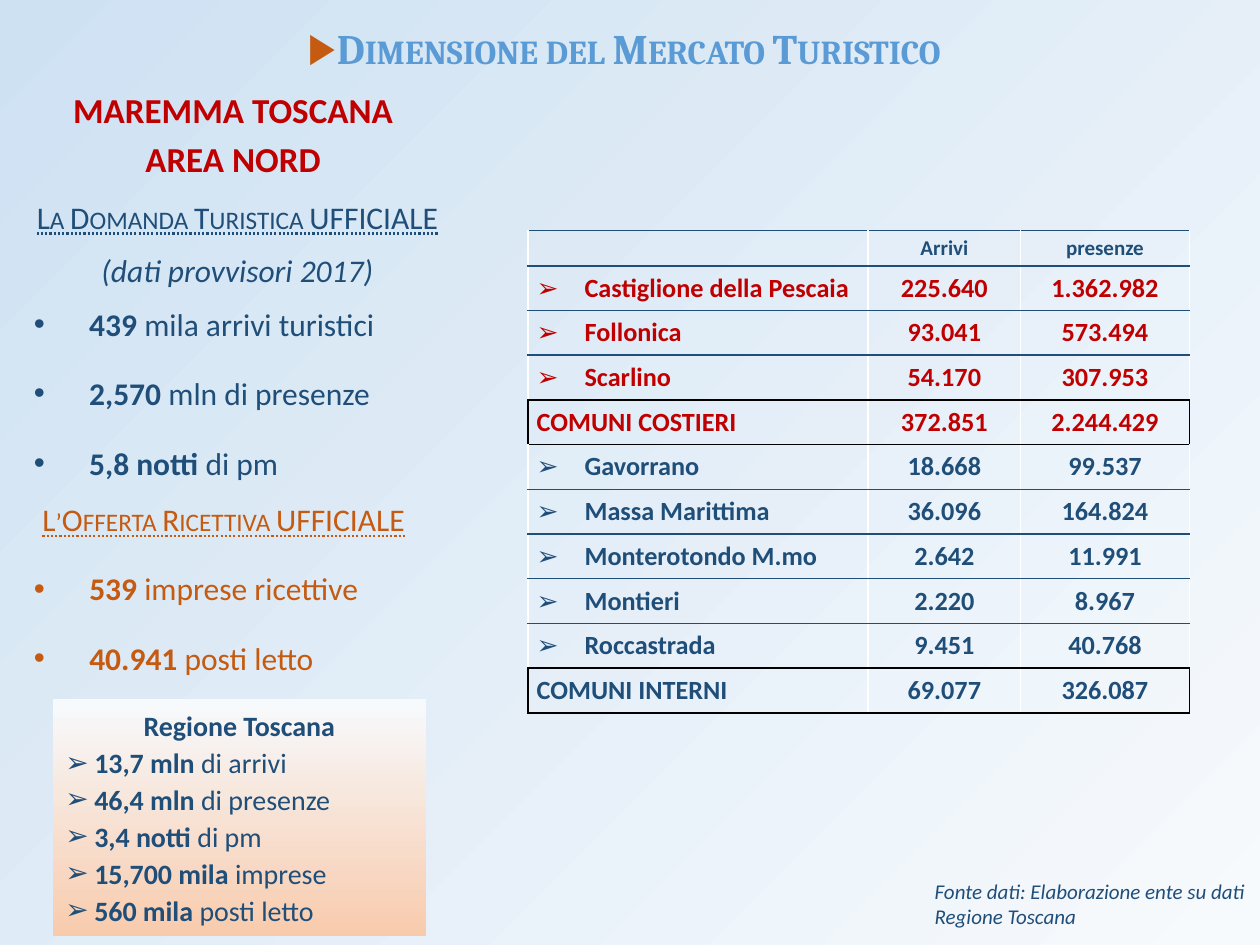
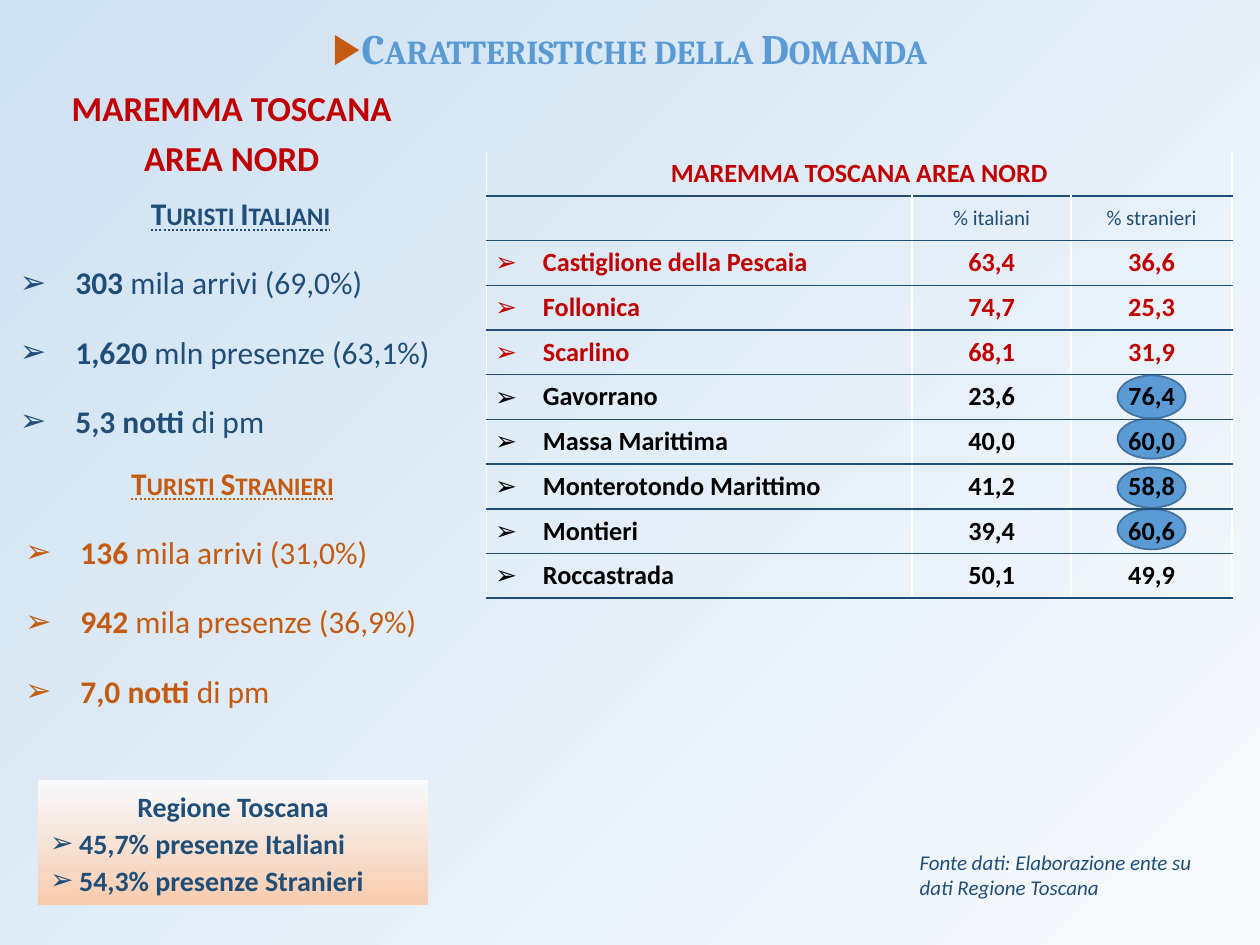
from lxml import etree
from pptx import Presentation
from pptx.dml.color import RGBColor
from pptx.enum import shapes, text
from pptx.oxml import ns
from pptx.util import Inches, Pt

COLORS = {
    "sky": "5B9BD5", "sky_edge": "43739E", "navy": "1F4E79", "orange": "C55A11",
    "red": "C00000", "black": "000000", "white": "FFFFFF",
    "pale": "F7FAFD", "light_blue": "CEE1F2", "peach": "F8CBAD",
}
CENTER = text.PP_ALIGN.CENTER
ARROW, DOT, TRIANGLE = "➢", "•", "▶"
ROW_HEIGHT = Inches(0.355)
SOURCE = "Fonte dati: Elaborazione ente su dati Regione Toscana"


def rgb(name):
    return RGBColor.from_string(COLORS[name])


def sub(parent, tag, **attributes):
    return etree.SubElement(parent, ns.qn(tag), **attributes)


def gradient(fill, start, end, angle):
    fill.gradient()
    fill.gradient_angle = angle
    for stop, color in zip(fill.gradient_stops, (start, end)):
        stop.color.rgb = rgb(color)


# Text
def style_run(run, size, color, bold=False, italic=False, font="Calibri",
              small_caps=False, underline=False):
    run.font.size, run.font.name = Pt(size), font
    run.font.bold, run.font.italic = bold, italic
    run.font.color.rgb = rgb(color)
    if small_caps:
        run._r.get_or_add_rPr().set("cap", "small")
    if underline:
        run.font.underline = text.MSO_UNDERLINE.DOTTED_LINE


def set_bullet(paragraph, char, indent, color=None):
    properties = paragraph._p.get_or_add_pPr()
    properties.set("marL", str(Inches(indent)))
    properties.set("indent", str(-Inches(indent)))
    if color:
        sub(sub(properties, "a:buClr"), "a:srgbClr", val=COLORS[color])
    sub(properties, "a:buFont", typeface="Arial")
    sub(properties, "a:buChar", char=char)


def add_line(frame, parts, size, color, align=None, before=0, after=0, spacing=None, **style):
    """Add a paragraph; parts is one string or a (bold, regular) pair."""
    paragraph = frame.paragraphs[0]
    if paragraph.runs:
        paragraph = frame.add_paragraph()
    paragraph.alignment = align
    paragraph.space_before, paragraph.space_after = Pt(before), Pt(after)
    if spacing:
        paragraph.line_spacing = spacing
    if isinstance(parts, str):
        paragraph.text = parts
        style_run(paragraph.runs[0], size, color, **style)
    else:
        for part, bold in zip(parts, (True, False)):
            run = paragraph.add_run()
            run.text = part
            style_run(run, size, color, bold=bold)
    return paragraph


def add_frame(slide, box):
    frame = slide.shapes.add_textbox(*map(Inches, box)).text_frame
    frame.word_wrap = True
    return frame


# Parts shared by the slides
def new_slide(deck, title, title_box, area_box, source_box):
    slide = deck.slides.add_slide(deck.slide_layouts[6])
    gradient(slide.background.fill, "pale", "light_blue", 135)

    heading = add_line(add_frame(slide, title_box), title, 24, "sky", CENTER,
                       bold=True, font="Cambria", small_caps=True)
    set_bullet(heading, TRIANGLE, 0.23, "orange")

    area = add_frame(slide, area_box)
    for name in ("MAREMMA TOSCANA", "AREA NORD"):
        add_line(area, name, 20, "red", CENTER, after=4.5, bold=True)

    add_line(add_frame(slide, source_box), SOURCE, 12, "navy", italic=True)
    return slide


def add_facts(slide, box, heading, facts, color, bullet, bold=False, note=None):
    frame = add_frame(slide, box)
    add_line(frame, heading, 18, color, CENTER, 9, 9,
             bold=bold, small_caps=True, underline=True)
    if note:
        add_line(frame, note, 18, color, CENTER, italic=True)
    for fact in facts:
        set_bullet(add_line(frame, fact, 18, color, None, 9, 9), bullet, 0.44)


def add_region(slide, box, facts):
    panel = slide.shapes.add_shape(shapes.MSO_SHAPE.RECTANGLE, *map(Inches, box))
    panel.shadow.inherit = False
    panel.line.fill.background()
    gradient(panel.fill, "pale", "peach", 270)
    frame = panel.text_frame
    frame.word_wrap = True
    frame.vertical_anchor = text.MSO_ANCHOR.TOP
    add_line(frame, "Regione Toscana", 16, "navy", CENTER, spacing=1.1, bold=True)
    for fact in facts:
        line = add_line(frame, fact, 16, "navy", text.PP_ALIGN.LEFT, spacing=1.1)
        set_bullet(line, ARROW, 0.23)


# Tables
def set_borders(cell, left, right, top, bottom):
    properties = cell._tc.get_or_add_tcPr()
    edges = zip(("a:lnL", "a:lnR", "a:lnT", "a:lnB"), (left, right, top, bottom))
    for position, (tag, color) in enumerate(edges):
        edge = etree.Element(ns.qn(tag), w=str(Pt(1)))
        if color:
            sub(sub(edge, "a:solidFill"), "a:srgbClr", val=COLORS[color])
        else:
            sub(edge, "a:noFill")
        properties.insert(position, edge)


def fill_cell(cell, value, size, color, bold, centered, bulleted):
    cell.fill.background()
    cell.vertical_anchor = text.MSO_ANCHOR.MIDDLE
    cell.margin_left = cell.margin_right = Inches(0.07)
    cell.margin_top = cell.margin_bottom = Inches(0.04)
    if not value:
        sub(cell.text_frame.paragraphs[0]._p, "a:endParaRPr", sz=str(size * 100))
        return
    line = add_line(cell.text_frame, value, size, color,
                    CENTER if centered else None, bold=bold)
    if bulleted:
        set_bullet(line, ARROW, 0.38)


def add_towns_table(slide, left, top, widths, header, rows, header_height=ROW_HEIGHT,
                    header_bold=False, banner=None):
    """Each row is (colour, values); a row named in capitals is a boxed total."""
    lines = [("navy", header)] + rows
    if banner:
        lines.insert(0, ("red", (banner, "", "")))
    head = len(lines) - len(rows) - 1
    totals = {r for r, (_, values) in enumerate(lines) if r > head and values[0].isupper()}
    table = slide.shapes.add_table(len(lines), len(widths), Inches(left), Inches(top),
                                   Inches(sum(widths)), ROW_HEIGHT * len(lines)).table
    table.first_row = table.horz_banding = False
    for column, width in zip(table.columns, widths):
        column.width = Inches(width)
    last = len(widths) - 1
    for r, (color, values) in enumerate(lines):
        table.rows[r].height = header_height if r == head else ROW_HEIGHT
        is_total = r in totals
        is_banner = r < head
        upper = "black" if totals & {r, r - 1} else "navy"
        lower = "black" if totals & {r, r + 1} else "navy"
        for c, value in enumerate(values):
            cell = table.cell(r, c)
            fill_cell(cell, value, 12 if r == head else 15, color,
                      bold=r != head or header_bold,
                      centered=c > 0 or is_banner,
                      bulleted=c == 0 and r > head and not is_total)
            set_borders(cell,
                        "black" if is_total and c == 0 else "white",
                        "black" if is_total and c == last else "white",
                        None if is_banner else upper, lower)
    if banner:
        table.cell(0, 0).merge(table.cell(0, last))


def add_highlights(slide, left, width, spans):
    for top, height in spans:
        oval = slide.shapes.add_shape(shapes.MSO_SHAPE.OVAL, *map(Inches, (left, top, width, height)))
        oval.shadow.inherit = False
        oval.fill.solid()
        oval.fill.fore_color.rgb = rgb("sky")
        oval.line.color.rgb = rgb("sky_edge")
        oval.line.width = Pt(1)


# Slides
def build_market(deck):
    slide = new_slide(deck, "Dimensione del Mercato Turistico", (0, 0.13, 9.91, 0.5),
                      (0.17, 0.65, 3.36, 0.84), (7.32, 6.92, 2.94, 0.5))
    add_facts(slide, (0.17, 1.52, 3.43, 2.37), "La Domanda Turistica UFFICIALE",
              [("439 ", "mila arrivi turistici"), ("2,570 ", "mln di presenze"),
               ("5,8 notti ", "di pm")],
              "navy", DOT, note="(dati provvisori 2017)")
    add_facts(slide, (0.17, 3.92, 3.21, 1.51), "L’Offerta Ricettiva UFFICIALE",
              [("539 ", "imprese ricettive"), ("40.941 ", "posti letto")], "orange", DOT)
    add_region(slide, (0.42, 5.55, 2.96, 1.88),
               [("13,7 mln ", "di arrivi"), ("46,4 mln ", "di presenze"),
                ("3,4 notti ", "di pm"), ("15,700 mila ", "imprese"),
                ("560 mila", " posti letto")])
    add_towns_table(slide, 4.19, 1.83, (2.7, 1.21, 1.34), ("", "Arrivi", "presenze"), [
        ("red", ("Castiglione della Pescaia", "225.640", "1.362.982")),
        ("red", ("Follonica", "93.041", "573.494")),
        ("red", ("Scarlino", "54.170", "307.953")),
        ("red", ("COMUNI COSTIERI", "372.851", "2.244.429")),
        ("navy", ("Gavorrano", "18.668", "99.537")),
        ("navy", ("Massa Marittima", "36.096", "164.824")),
        ("navy", ("Monterotondo M.mo", "2.642", "11.991")),
        ("navy", ("Montieri", "2.220", "8.967")),
        ("navy", ("Roccastrada", "9.451", "40.768")),
        ("navy", ("COMUNI INTERNI", "69.077", "326.087")),
    ], header_height=Inches(0.27), header_bold=True)


def build_demand(deck):
    slide = new_slide(deck, "Caratteristiche della Domanda", (0, 0.13, 10, 0.5),
                      (0.16, 0.64, 3.36, 0.84), (7.2, 6.69, 2.56, 0.5))
    add_facts(slide, (0.06, 1.49, 3.7, 2.07), "Turisti Italiani",
              [("303 ", "mila arrivi (69,0%)"), ("1,620 ", "mln presenze (63,1%)"),
               ("5,3 notti ", "di pm")], "navy", ARROW, bold=True)
    add_facts(slide, (0.1, 3.63, 3.49, 2.07), "Turisti Stranieri",
              [("136 ", "mila arrivi (31,0%)"), ("942 ", "mila presenze (36,9%)"),
               ("7,0 notti ", "di pm")], "orange", ARROW, bold=True)
    add_region(slide, (0.3, 6.19, 3.1, 0.99),
               [("45,7% presenze Italiani",), ("54,3% presenze Stranieri",)])
    # Ovals sit behind the table figures
    add_highlights(slide, 8.87, 0.54, [(2.98, 0.34), (3.32, 0.32), (3.71, 0.32), (4.04, 0.32)])
    add_towns_table(slide, 3.86, 1.2, (3.38, 1.26, 1.28), ("", "% italiani", "% stranieri"), [
        ("red", ("Castiglione della Pescaia", "63,4", "36,6")),
        ("red", ("Follonica", "74,7", "25,3")),
        ("red", ("Scarlino", "68,1", "31,9")),
        ("black", ("Gavorrano", "23,6", "76,4")),
        ("black", ("Massa Marittima", "40,0", "60,0")),
        ("black", ("Monterotondo Marittimo", "41,2", "58,8")),
        ("black", ("Montieri", "39,4", "60,6")),
        ("black", ("Roccastrada", "50,1", "49,9")),
    ], banner="MAREMMA TOSCANA AREA NORD")


def main():
    deck = Presentation()
    deck.slide_width, deck.slide_height = Inches(10), Inches(7.5)
    build_market(deck)
    build_demand(deck)
    deck.save("out.pptx")


if __name__ == "__main__":
    main()
